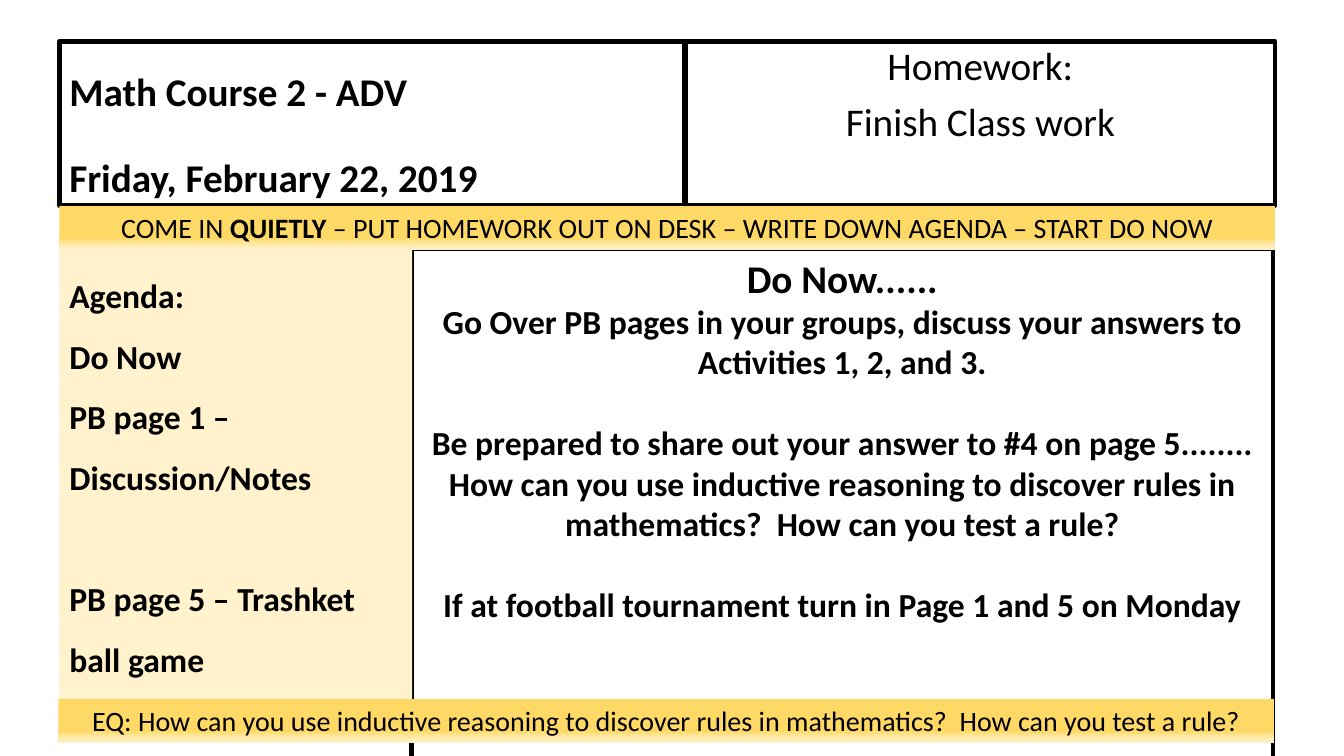
from copy import deepcopy

from pptx import Presentation
from pptx.dml.color import RGBColor
from pptx.enum.shapes import MSO_SHAPE
from pptx.enum.text import MSO_ANCHOR, PP_ALIGN
from pptx.oxml.ns import qn
from pptx.util import Pt

BLACK = RGBColor(0x00, 0x00, 0x00)
GOLD = RGBColor(0xFF, 0xD9, 0x66)
SAND = RGBColor(0xFF, 0xE6, 0x99)
CREAM = RGBColor(0xFF, 0xF2, 0xCC)
FADE = [(0, GOLD), (0.74, GOLD), (0.83, SAND), (1, CREAM)]

RECT = MSO_SHAPE.RECTANGLE
TOP, BOTTOM = MSO_ANCHOR.TOP, MSO_ANCHOR.BOTTOM
LEFT, CENTER = PP_ALIGN.LEFT, PP_ALIGN.CENTER

EDGE = 42.5
WIDTH = 868.3
BAND = 31.7


def add_box(slide, left, top, width, height, border=False, color=None):
    box = slide.shapes.add_shape(RECT, Pt(left), Pt(top), Pt(width), Pt(height))
    box.shadow.inherit = False
    if color is None:
        box.fill.background()
    else:
        box.fill.solid()
        box.fill.fore_color.rgb = color
    if border:
        box.line.color.rgb = BLACK
        box.line.width = Pt(3.25)
    else:
        box.line.fill.background()
    return box


def set_fade(box):
    box.fill.gradient()
    box.fill.gradient_angle = 270
    stops = box._element.spPr.find(qn("a:gradFill")).find(qn("a:gsLst"))
    while len(stops) < len(FADE):
        stops.append(deepcopy(stops[0]))
    for stop, (place, color) in zip(box.fill.gradient_stops, FADE):
        stop.position = place
        stop.color.rgb = color


def add_text(box, text, size=24, bold=False, align=CENTER, anchor=TOP,
             lines=1, before=0, first=False):
    frame = box.text_frame
    frame.word_wrap = True
    frame.vertical_anchor = anchor
    para = frame.paragraphs[0] if first else frame.add_paragraph()
    para.alignment = align
    para.line_spacing = lines
    para.space_before = Pt(before)
    for i, part in enumerate(text.split("*")):
        run = para.add_run()
        run.text = part
        run.font.name = "Calibri"
        run.font.size = Pt(size)
        run.font.bold = bold or i % 2 == 1
        run.font.color.rgb = BLACK


def add_band(slide, left, top, text):
    band = add_box(slide, left, top, WIDTH, BAND)
    set_fade(band)
    add_text(band, text, size=20, first=True)


def add_head(slide):
    course = add_box(slide, EDGE, 29.5, 446.4, 117.4, border=True)
    style = dict(size=28, bold=True, align=LEFT, anchor=BOTTOM, lines=0.9)
    add_text(course, "Math Course 2 - ADV", first=True, **style)
    add_text(course, "Friday, February 22, 2019", before=30.75, **style)

    work = add_box(slide, 489.6, 29.5, 421.2, 117.4, border=True)
    add_text(work, "Homework:", size=28, lines=0.9, first=True)
    add_text(work, "Finish Class work", size=28, lines=0.9, before=10)


def add_task(slide):
    task = add_box(slide, 293.8, 177.8, 615.6, 545, border=True)
    add_text(task, "Do Now......", size=28, bold=True, first=True)
    for text, before in [
        ("Go Over PB pages in your groups, discuss your answers to "
         "Activities 1, 2, and 3.", 0),
        ("Be prepared to share out your answer to #4 on page 5........", 29),
        ("How can you use inductive reasoning to discover rules in "
         "mathematics?\u00a0 How can you test a rule?".replace("\u00a0", " "), 0),
        ("If at football tournament turn in Page 1 and 5 on Monday", 29),
    ]:
        add_text(task, text, bold=True, before=before)


def add_plan(slide):
    plan = add_box(slide, EDGE, 178.6, 252, 352, color=CREAM)
    for i, (text, before) in enumerate([
        ("Agenda:", 0),
        ("Do Now", 0),
        ("PB page 1 – Discussion/Notes", 0),
        ("PB page 5 – Trashket ball game", 43.5),
    ]):
        add_text(plan, text, bold=True, align=LEFT, lines=1.5,
                 before=before, first=i == 0)


def main():
    deck = Presentation()
    deck.slide_width, deck.slide_height = Pt(960), Pt(540)
    slide = deck.slides.add_slide(deck.slide_layouts[6])
    add_head(slide)
    add_task(slide)
    add_band(slide, EDGE, 146.9, "COME IN *QUIETLY* – PUT HOMEWORK OUT ON DESK "
             "– WRITE DOWN AGENDA – START DO NOW")
    add_plan(slide)
    add_band(slide, 41.8, 499, "EQ: How can you use inductive reasoning to "
             "discover rules in mathematics?  How can you test a rule?")
    deck.save("out.pptx")


if __name__ == "__main__":
    main()
